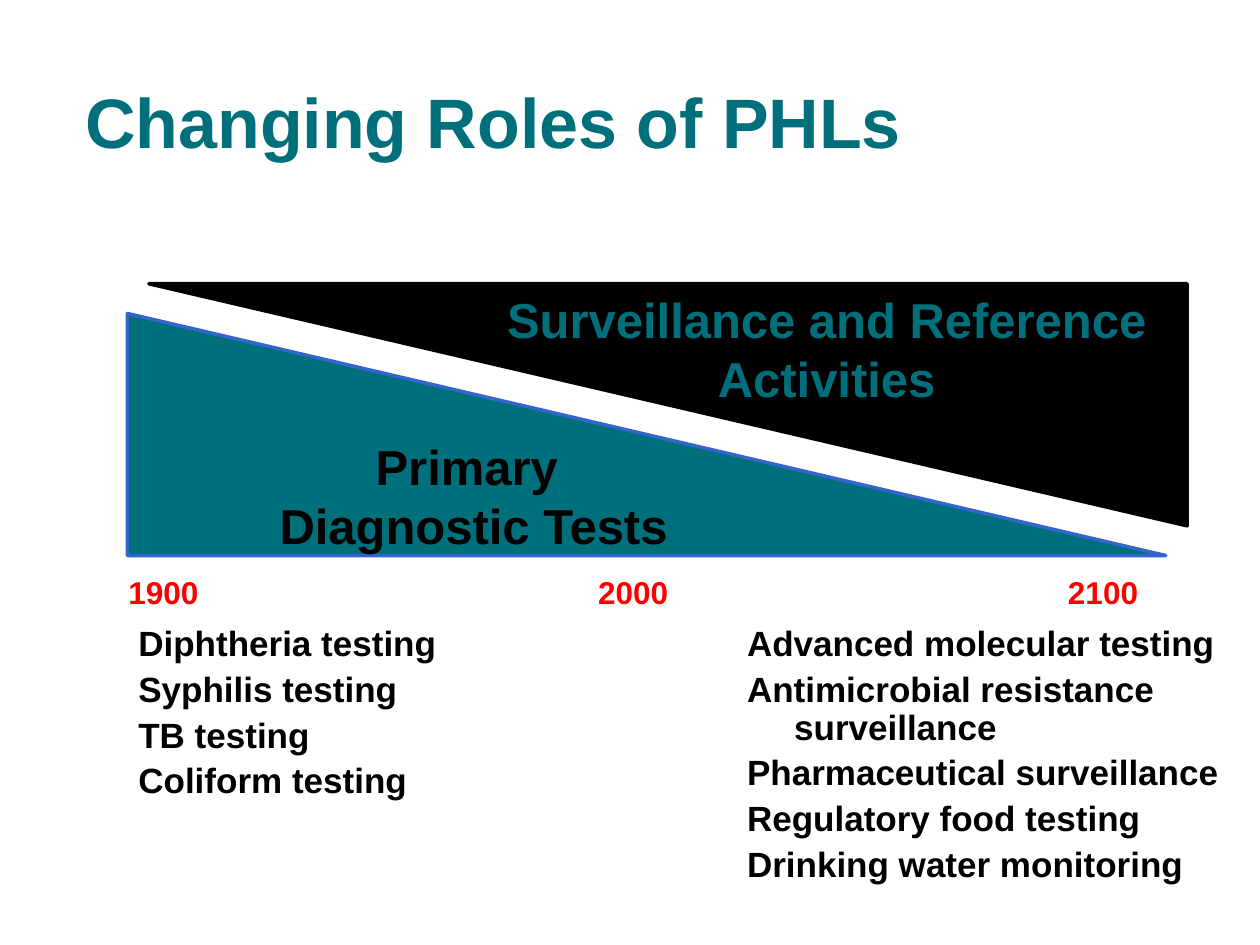
import pptx
import pptx.dml.color
import pptx.enum.shapes
import pptx.enum.text
import pptx.util

Cm = pptx.util.Cm
Pt = pptx.util.Pt
Align = pptx.enum.text.PP_ALIGN
Anchor = pptx.enum.text.MSO_ANCHOR
AutoSize = pptx.enum.text.MSO_AUTO_SIZE

COLORS = {"teal": "006F7C", "blue": "3366CC", "black": "000000", "red": "FF0000"}


def rgb(name):
    return pptx.dml.color.RGBColor.from_string(COLORS[name])


def write_text(frame, lines, size, color, font="Arial", align=Align.LEFT,
               anchor=Anchor.TOP, wrap=True, grow=False, hanging=None,
               line_spacing=None, space_before=0):
    frame.word_wrap = wrap
    frame.vertical_anchor = anchor
    frame.auto_size = AutoSize.SHAPE_TO_FIT_TEXT if grow else AutoSize.NONE
    for index, line in enumerate(lines):
        paragraph = frame.paragraphs[0] if index == 0 else frame.add_paragraph()
        paragraph.alignment = align
        if hanging is not None:
            properties = paragraph._p.get_or_add_pPr()
            properties.set("marL", str(hanging))
            properties.set("indent", str(-hanging))
        if line_spacing:
            paragraph.line_spacing = line_spacing
        paragraph.space_before = Pt(space_before if index else 0)
        run = paragraph.add_run()
        run.text = line
        run.font.name = font
        run.font.size = Pt(size)
        run.font.bold = True
        run.font.color.rgb = rgb(color)


class SlideBuilder:
    def __init__(self, slide):
        self.slide = slide
        self.line_width = Pt(2)
        self.triangle_size = (Cm(20.93), Cm(4.88))
        self.list_format = dict(size=20, color="black", hanging=Cm(0.95),
                                line_spacing=0.9, space_before=4.6)

    def triangle(self, left, top, fill, line, rotation=0):
        shape = self.slide.shapes.add_shape(
            pptx.enum.shapes.MSO_SHAPE.RIGHT_TRIANGLE,
            Cm(left), Cm(top), *self.triangle_size)
        shape.shadow.inherit = False
        shape.rotation = rotation
        shape.fill.solid()
        shape.fill.fore_color.rgb = rgb(fill)
        shape.line.color.rgb = rgb(line)
        shape.line.width = self.line_width
        return shape

    def text(self, left, top, width, height, lines, **text_format):
        box = self.slide.shapes.add_textbox(Cm(left), Cm(top), Cm(width), Cm(height))
        write_text(box.text_frame, lines, **text_format)

    def topic_list(self, left, height, lines):
        self.text(left, 12.5, 10.16, height, lines, **self.list_format)


def main():
    presentation = pptx.Presentation()
    presentation.slide_width = Cm(25.4)
    presentation.slide_height = Cm(19.05)
    slide = presentation.slides.add_slide(presentation.slide_layouts[6])
    builder = SlideBuilder(slide)

    diagnostics = builder.triangle(2.57, 6.32, "teal", "blue")
    write_text(diagnostics.text_frame, ["Primary ", "Diagnostic Tests"], size=28,
               color="black", align=Align.CENTER, anchor=Anchor.MIDDLE, wrap=False)

    for index, year in enumerate(["1900", "2000", "2100"]):
        builder.text(2.34 + index * 9.47, 11.43, 2.39, 1.27, [year],
                     size=18, color="red", wrap=False, grow=True)

    builder.triangle(3, 5.72, "black", "black", rotation=180)
    builder.text(9.4, 5.72, 14.53, 2.62, ["Surveillance and Reference", "Activities"],
                 size=28, color="teal", align=Align.CENTER, grow=True)

    builder.text(1.47, 0.84, 23.7, 3.18, ["Changing Roles of PHLs"],
                 size=40, color="teal", anchor=Anchor.MIDDLE)

    builder.topic_list(14.81, 5.92, [
        "Advanced molecular testing",
        "Antimicrobial resistance surveillance",
        "Pharmaceutical surveillance",
        "Regulatory food testing",
        "Drinking water monitoring",
    ])
    builder.topic_list(2.54, 5.28, [
        "Diphtheria testing",
        "Syphilis testing",
        "TB testing",
        "Coliform testing",
    ])

    presentation.save("out.pptx")


if __name__ == "__main__":
    main()
